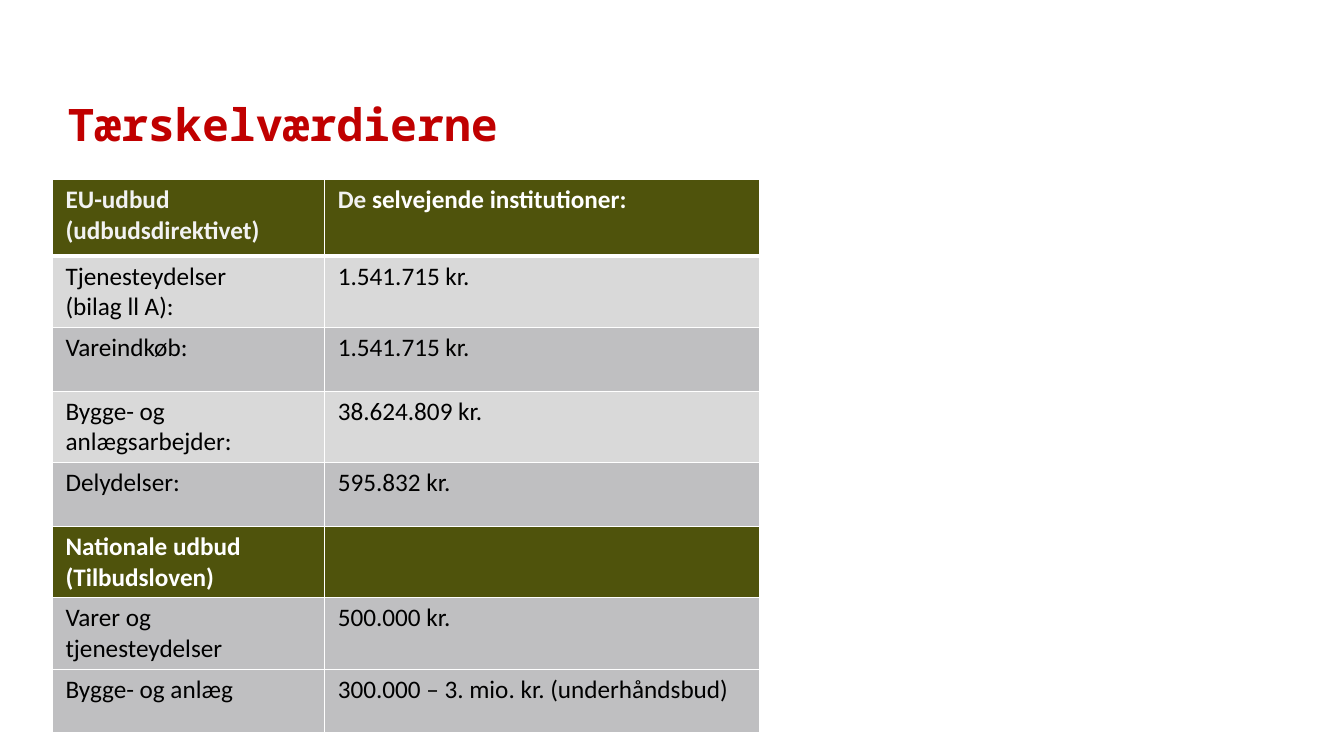
from lxml.etree import SubElement
from pptx import Presentation
from pptx.dml.color import RGBColor
from pptx.enum.text import MSO_ANCHOR, PP_ALIGN
from pptx.oxml.ns import qn
from pptx.util import Inches, Pt

HEADER, LIGHT, DARK = "4F530C", "D9D9D9", "BFBFC1"
WHITE, PALE, BLACK, RED = "FFFFFF", "F2F2F2", "000000", "C00000"

THRESHOLDS = [
    (HEADER, [("EU-udbud (udbudsdirektivet)", PALE)],
     [("De ", PALE), ("selvejende institutioner:", WHITE)]),
    (LIGHT, "Tjenesteydelser\n(bilag ll A):", "1.541.715 kr."),
    (DARK, "Vareindkøb:", "1.541.715 kr."),
    (LIGHT, "Bygge- og anlægsarbejder:", "38.624.809 kr."),
    (DARK, "Delydelser:", "595.832 kr."),
    (HEADER, "Nationale udbud\n(Tilbudsloven)", ""),
    (DARK, "Varer og tjenesteydelser", "500.000 kr."),
    (DARK, "Bygge- og anlæg", "300.000 – 3. mio. kr. (underhåndsbud)"),
]


def colour(value):
    return RGBColor.from_string(value)


def apply(target, values):
    for name, value in values.items():
        setattr(target, name, value)


class ThresholdPage:
    """Holds the style and the current slide, and adds its elements."""

    title_font = {"name": "Noto Sans Mono", "size": Pt(32), "bold": True}
    cell_font = {"name": "Calibri", "size": Pt(18)}
    title_frame = {"margin_left": 0, "margin_top": 0, "margin_right": 0,
                   "margin_bottom": 0, "vertical_anchor": MSO_ANCHOR.BOTTOM,
                   "word_wrap": True}
    cell_margins = {"margin_left": Inches(0.13), "margin_top": Inches(0.05),
                    "margin_right": Inches(0.13), "margin_bottom": Inches(0.05)}

    def __init__(self, deck):
        self.page = deck.slides.add_slide(deck.slide_layouts[5])

    def title(self, text, left, top, width, height):
        box = self.page.shapes.title
        apply(box, {"left": Inches(left), "top": Inches(top),
                    "width": Inches(width), "height": Inches(height)})
        apply(box.text_frame, self.title_frame)
        para = box.text_frame.paragraphs[0]
        para.alignment = PP_ALIGN.LEFT
        self.span(para, text, RED, self.title_font)

    def span(self, para, text, ink, font):
        span = para.add_run()
        span.text = text
        apply(span.font, font)
        span.font.color.rgb = colour(ink)

    def borders(self, cell, widths):
        properties = cell._tc.get_or_add_tcPr()
        for side, width in zip("LRTB", widths):
            line = SubElement(properties, qn(f"a:ln{side}"), w=str(Pt(width)))
            fill = SubElement(line, qn("a:solidFill"))
            SubElement(fill, qn("a:srgbClr"), val=WHITE)

    def cell(self, cell, content, fill, widths):
        apply(cell, self.cell_margins)
        self.borders(cell, widths)
        cell.fill.solid()
        cell.fill.fore_color.rgb = colour(fill)
        header = fill == HEADER
        ink = WHITE if header else BLACK
        font = {**self.cell_font, "bold": header}
        if isinstance(content, str):
            lines = [[(line, ink)] for line in content.split("\n") if line]
        else:
            lines = [content]
        frame = cell.text_frame
        for index, line in enumerate(lines):
            para = frame.add_paragraph() if index else frame.paragraphs[0]
            for text, shade in line:
                self.span(para, text, shade, font)

    def table(self, rows, left, top, columns, heights):
        table = self.page.shapes.add_table(
            len(rows), len(columns), Inches(left), Inches(top),
            Inches(sum(columns)), Inches(sum(heights))).table
        for column, width in zip(table.columns, columns):
            column.width = Inches(width)
        for index, (fill, *contents) in enumerate(rows):
            table.rows[index].height = Inches(heights[index])
            widths = (1, 1, 3 if index == 1 else 1, 3 if index == 0 else 1)
            for number, content in enumerate(contents):
                self.cell(table.cell(index, number), content, fill, widths)


def main():
    deck = Presentation()
    deck.slide_width, deck.slide_height = Inches(13.33), Inches(7.5)
    page = ThresholdPage(deck)
    page.title("Tærskelværdierne", 0.67, 0.68, 12.02, 0.81)
    page.table(THRESHOLDS, 0.52, 1.78, [2.7, 4.31], [0.76] + [0.63] * 7)
    deck.save("out.pptx")


if __name__ == "__main__":
    main()
